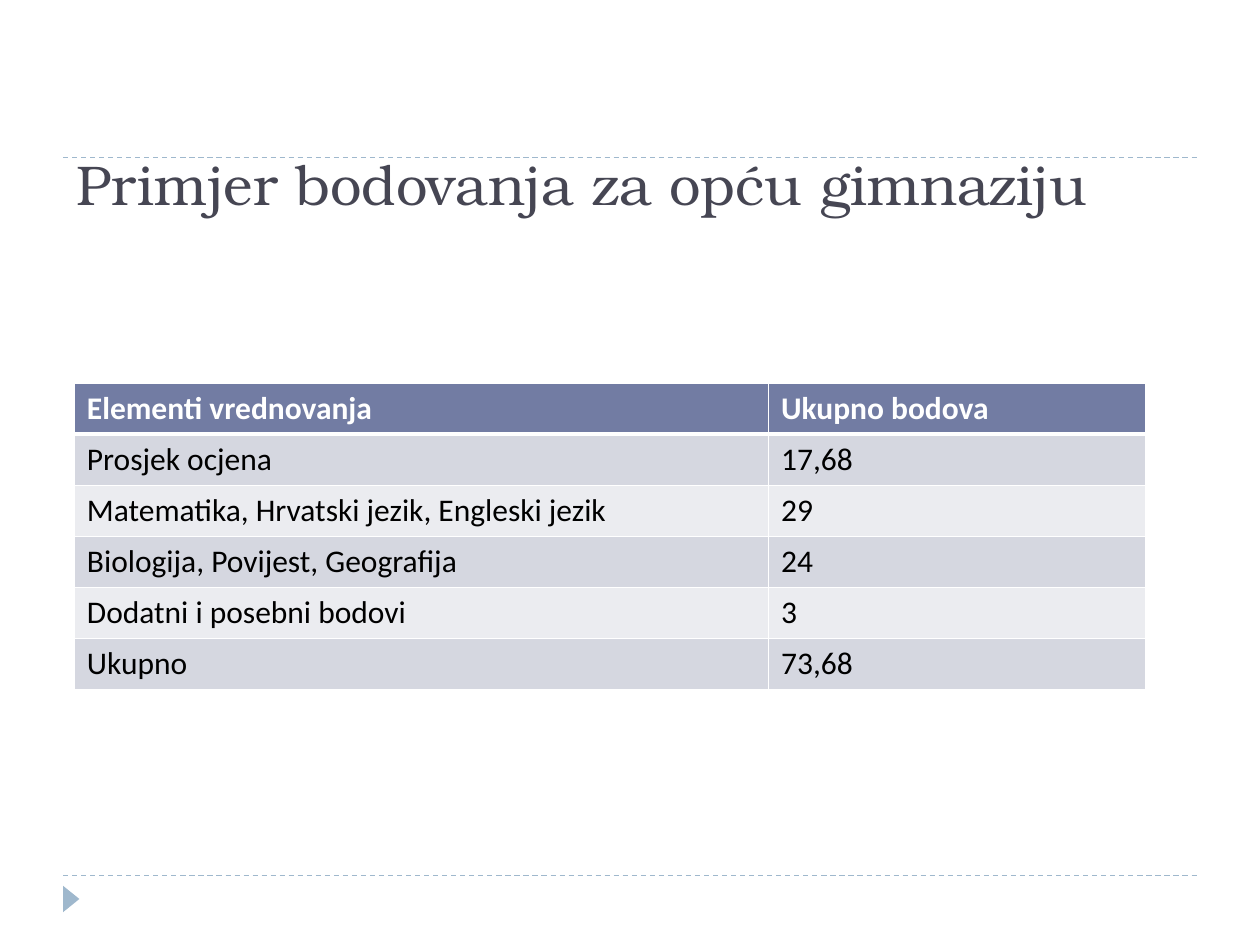
from pptx import Presentation
from pptx.dml.color import RGBColor
from pptx.enum.dml import MSO_LINE
from pptx.enum.shapes import MSO_CONNECTOR, MSO_SHAPE
from pptx.enum.text import MSO_ANCHOR
from pptx.oxml import parse_xml
from pptx.oxml.ns import nsdecls
from pptx.util import Inches, Pt


def rgb(value):
    return RGBColor.from_string(value)


def add_border(cell, side, width):
    """Draw a white border on one side (L, R, T or B), width in points."""
    cell._tc.get_or_add_tcPr().append(parse_xml(
        f'<a:ln{side} {nsdecls("a")} w="{Pt(width)}"><a:solidFill>'
        f'<a:srgbClr val="FFFFFF"/></a:solidFill></a:ln{side}>'))


prs = Presentation()
prs.slide_width, prs.slide_height = Inches(10), Inches(7.5)
s = prs.slides.add_slide(prs.slide_layouts[6])

# Dashed rules and corner marker
for y in (6.95, 1.25):
    rule = s.shapes.add_connector(MSO_CONNECTOR.STRAIGHT, Inches(0.5), Inches(y),
                                  Inches(9.5), Inches(y))
    rule.line.color.rgb = rgb("9FB8CD")
    rule.line.width = Pt(0.75)
    rule.line.dash_style = MSO_LINE.DASH
    rule._element.spPr.append(parse_xml(f'<a:effectLst {nsdecls("a")}/>'))

marker = s.shapes.add_shape(MSO_SHAPE.ISOSCELES_TRIANGLE, Inches(0.46), Inches(7.07),
                            Inches(0.21), Inches(0.13))
marker.rotation = 90
marker.shadow.inherit = False
marker.fill.solid()
marker.fill.fore_color.rgb = rgb("9FB8CD")
marker.line.fill.background()

# Points table
rows = [
    ("Elementi vrednovanja", "Ukupno bodova"),
    ("Prosjek ocjena", "17,68"),
    ("Matematika, Hrvatski jezik, Engleski jezik", "29"),
    ("Biologija, Povijest, Geografija", "24"),
    ("Dodatni i posebni bodovi", "3"),
    ("Ukupno", "73,68"),
]
table = s.shapes.add_table(len(rows), 2, Inches(0.59), Inches(3.04),
                           Inches(8.5), Inches(2.43)).table
table.columns[0].width = Inches(5.51)
table.columns[1].width = Inches(2.99)
for i, row in enumerate(rows):
    header = i == 0
    fill = "727CA3" if header else ("EBECF0", "D5D7E0")[i % 2]
    for j, text in enumerate(row):
        cell = table.cell(i, j)
        for side in "LRTB":
            thick = (side == "B" and header) or (side == "T" and i == 1)
            add_border(cell, side, 3 if thick else 1)
        cell.fill.solid()
        cell.fill.fore_color.rgb = rgb(fill)
        cell.text = text
        font = cell.text_frame.paragraphs[0].font
        font.name, font.size, font.bold = "Calibri", Pt(18), header
        font.color.rgb = rgb("FFFFFF" if header else "000000")

# Title
title = s.shapes.add_textbox(Inches(0.51), Inches(0.52), Inches(9), Inches(1.25))
tf = title.text_frame
tf.word_wrap = True
tf.vertical_anchor = MSO_ANCHOR.BOTTOM
p = tf.paragraphs[0]
p.text = "Primjer bodovanja za opću gimnaziju"
p.font.name, p.font.size = "TeX Gyre Bonum", Pt(32)
p.font.color.rgb = rgb("464653")

prs.save("out.pptx")
